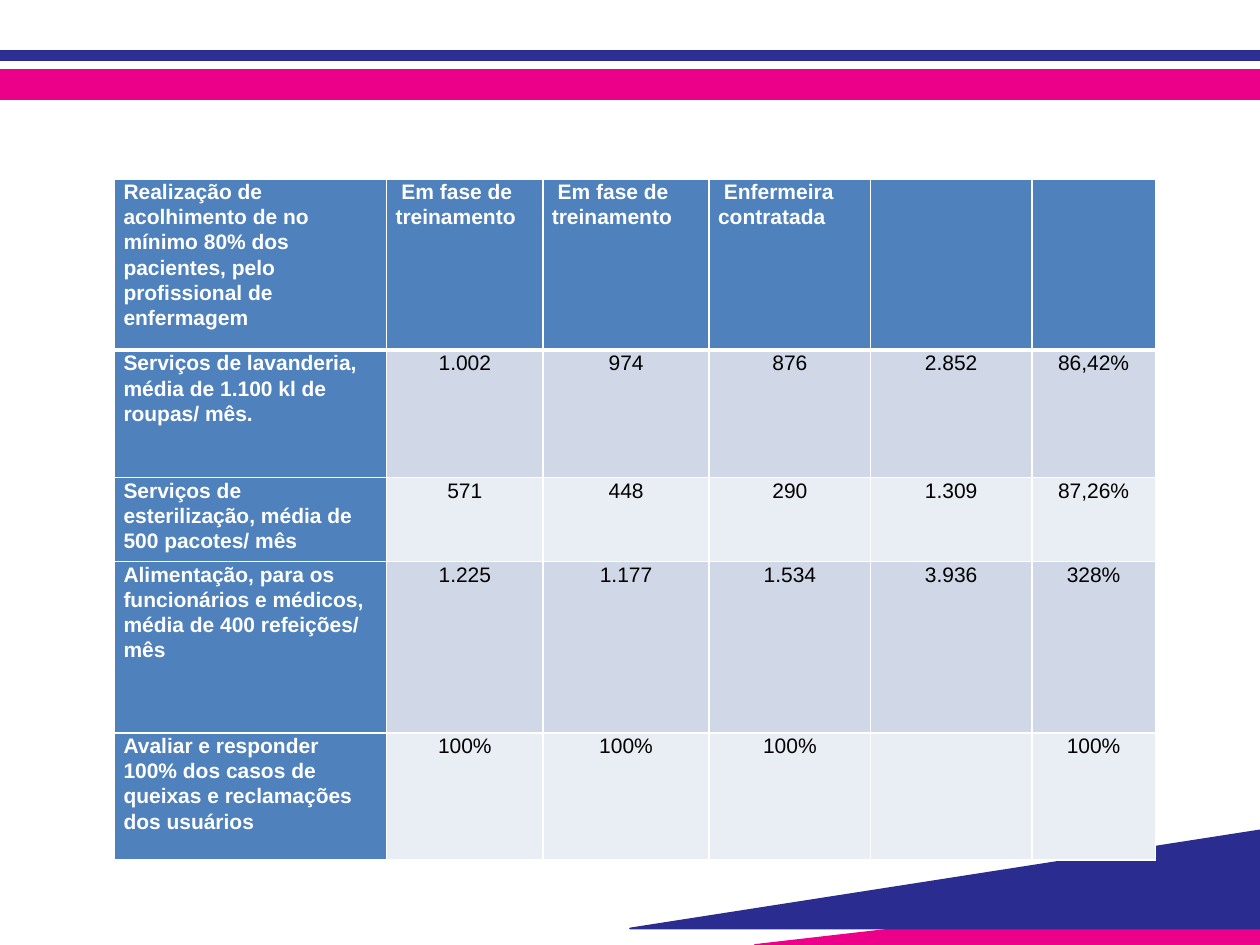
from lxml.etree import SubElement
from pptx import Presentation
from pptx.dml.color import RGBColor
from pptx.enum.shapes import MSO_CONNECTOR as Connector, MSO_SHAPE as Shape
from pptx.enum.text import PP_ALIGN as Align
from pptx.oxml.ns import qn
from pptx.util import Pt

NAVY = RGBColor(0x2B, 0x2C, 0x90)
INDIGO = RGBColor(0x2D, 0x2F, 0x92)
PINK = RGBColor(0xEC, 0x00, 0x89)
BLUE = RGBColor(0x4F, 0x81, 0xBD)
LIGHT = RGBColor(0xD0, 0xD8, 0xE8)
PALE = RGBColor(0xE9, 0xED, 0xF4)
WHITE = RGBColor(0xFF, 0xFF, 0xFF)
BLACK = RGBColor(0x00, 0x00, 0x00)

WIDTH, HEIGHT = 720, 540
COLUMNS = [155.5, 89.3, 95, 92.2, 92.2, 70.6]
ROWS = [97.9, 72.7, 48.2, 97.9, 72.7]
SERVICES = [
    ["Realização de acolhimento de no mínimo 80% dos pacientes, pelo profissional de enfermagem",
     " Em fase de treinamento", " Em fase de treinamento", " Enfermeira contratada", "", ""],
    ["Serviços de lavanderia, média de 1.100 kl de roupas/ mês.",
     "1.002", "974", "876", "2.852", "86,42%"],
    ["Serviços de esterilização, média de 500 pacotes/ mês",
     "571", "448", "290", "1.309", "87,26%"],
    ["Alimentação, para os funcionários e médicos, média de 400 refeições/ mês",
     "1.225", "1.177", "1.534", "3.936", "328%"],
    ["Avaliar e responder 100% dos casos de queixas e reclamações dos usuários",
     "100%", "100%", "100%", "", "100%"],
]


def assign(target, values):
    for name, value in values.items():
        setattr(target, name, value)


class Page:
    font = {"name": "Arial", "size": Pt(12)}
    spacing = {"line_spacing": 1.07, "space_after": Pt(8)}
    margins = {"margin_left": Pt(5.1), "margin_right": Pt(5.1), "margin_top": 0, "margin_bottom": 0}
    outline = 0.96

    def __init__(self, deck):
        self.slide = deck.slides.add_slide(deck.slide_layouts[6])

    def paint(self, shape, color):
        shape.shadow.inherit = False
        shape.fill.solid()
        shape.fill.fore_color.rgb = color
        shape.line.color.rgb = color
        shape.line.width = Pt(self.outline)

    def band(self, top, height, color):
        shape = self.slide.shapes.add_shape(Shape.RECTANGLE, 0, Pt(top), Pt(WIDTH), Pt(height))
        self.paint(shape, color)

    def rule(self, top, weight, color):
        line = self.slide.shapes.add_connector(Connector.STRAIGHT, 0, Pt(top), Pt(WIDTH), Pt(top))
        line.line.color.rgb = color
        line.line.width = Pt(weight)
        SubElement(line.element.spPr, qn("a:effectLst"))

    def wedge(self, left, top, bottom, color):
        builder = self.slide.shapes.build_freeform(Pt(WIDTH), Pt(top))
        builder.add_line_segments([(Pt(left), Pt(bottom)), (Pt(WIDTH), Pt(bottom))], close=True)
        self.paint(builder.convert_to_shape(), color)

    def borders(self, cell, weights):
        properties = cell._tc.get_or_add_tcPr()
        for side, weight in weights.items():
            line = SubElement(properties, qn(f"a:ln{side}"), w=str(Pt(weight)))
            fill = SubElement(line, qn("a:solidFill"))
            SubElement(fill, qn("a:srgbClr"), val=str(WHITE))

    def label(self, cell, text, heading):
        paragraph = cell.text_frame.paragraphs[0]
        assign(paragraph, self.spacing)
        paragraph.alignment = Align.LEFT if heading else Align.CENTER
        span = paragraph.add_run()
        span.text = text
        assign(span.font, {**self.font, "bold": heading})
        span.font.color.rgb = WHITE if heading else BLACK

    def table(self, left, top, columns, rows, content):
        frame = self.slide.shapes.add_table(
            len(rows), len(columns), Pt(left), Pt(top), Pt(sum(columns)), Pt(sum(rows)))
        table = frame.table
        assign(table, {"first_row": False, "horz_banding": False})
        for column, width in zip(table.columns, columns):
            column.width = Pt(width)
        for i, (row, height, texts) in enumerate(zip(table.rows, rows, content)):
            row.height = Pt(height)
            weights = {"L": 1, "R": 1, "T": 3 if i == 1 else 1, "B": 3 if i == 0 else 1}
            for j, (cell, text) in enumerate(zip(row.cells, texts)):
                heading = i == 0 or j == 0
                assign(cell, self.margins)
                self.borders(cell, weights)
                cell.fill.solid()
                cell.fill.fore_color.rgb = BLUE if heading else (LIGHT if i % 2 else PALE)
                if text:
                    self.label(cell, text, heading)


def main():
    deck = Presentation()
    assign(deck, {"slide_width": Pt(WIDTH), "slide_height": Pt(HEIGHT)})
    page = Page(deck)
    page.band(28.8, 5.8, NAVY)
    page.rule(31.7, 5.64, INDIGO)
    page.band(40, 16.5, PINK)
    page.wedge(431.3, 506.9, HEIGHT, PINK)
    page.wedge(360, 474.5, 530.6, NAVY)
    page.table(65.5, 102.2, COLUMNS, ROWS, SERVICES)
    deck.save("out.pptx")


if __name__ == "__main__":
    main()
